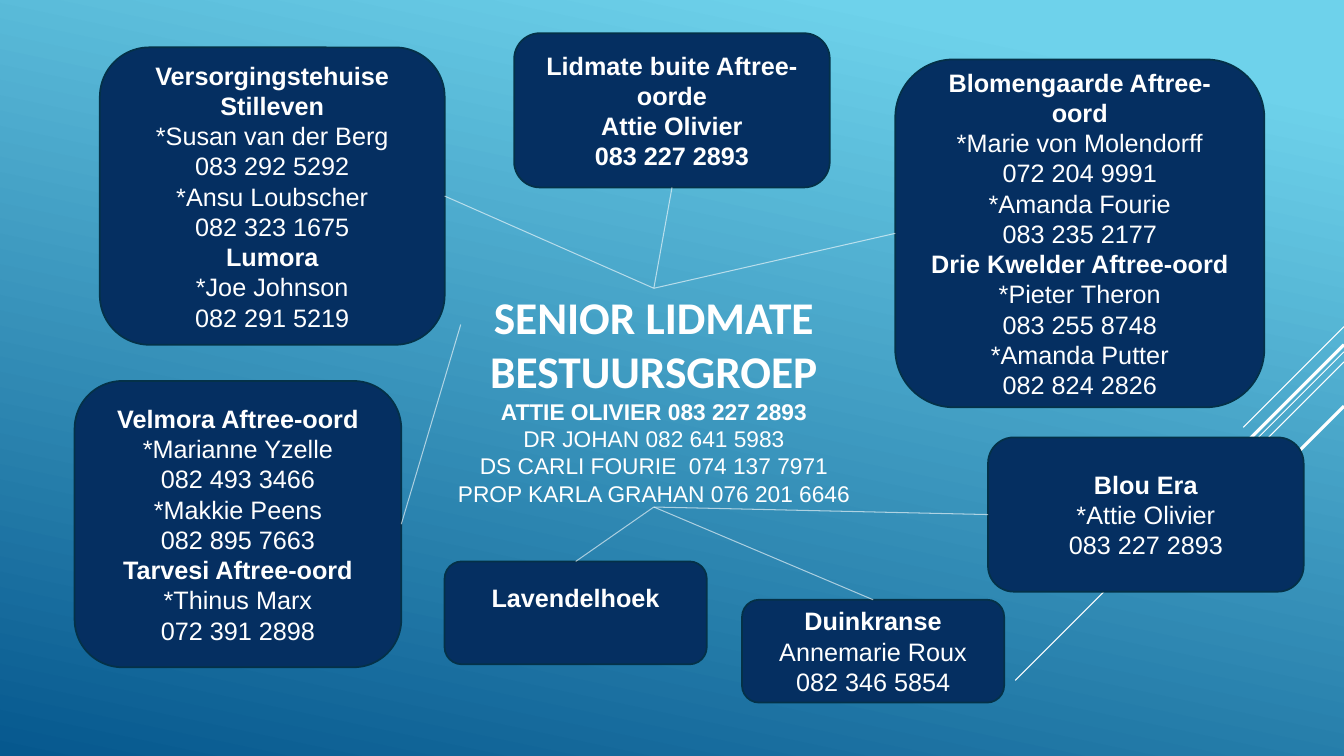
from copy import deepcopy
from dataclasses import dataclass

from lxml import etree
from pptx import Presentation
from pptx.dml.color import RGBColor
from pptx.enum.shapes import MSO_CONNECTOR, MSO_SHAPE
from pptx.enum.text import MSO_ANCHOR, MSO_AUTO_SIZE, PP_ALIGN
from pptx.oxml.ns import qn
from pptx.util import Inches, Pt

STRAIGHT = MSO_CONNECTOR.STRAIGHT
ROUNDED = MSO_SHAPE.ROUNDED_RECTANGLE
MIDDLE = MSO_ANCHOR.MIDDLE
NO_AUTOFIT = MSO_AUTO_SIZE.NONE
CENTER = PP_ALIGN.CENTER
TOP, LEFT, BOTTOM, RIGHT = range(4)

TITLE_ONLY = 5
WIDTH, HEIGHT = Inches(13.33), Inches(7.5)
COLUMNS, ROWS = 133.3, 75


@dataclass(frozen=True)
class Theme:
    sky: RGBColor = RGBColor(0x6E, 0xD2, 0xEB)
    sea: RGBColor = RGBColor(0x06, 0x58, 0x8E)
    card: RGBColor = RGBColor(0x05, 0x2F, 0x61)
    card_edge: RGBColor = RGBColor(0x04, 0x31, 0x48)
    white: RGBColor = RGBColor(0xFF, 0xFF, 0xFF)
    heading_font: str = "Calibri"
    body_font: str = "Arial"
    heading_size: float = 32.4
    contact_size: float = 16.2
    card_size: float = 18
    thin: float = 0.75
    thick: float = 2.25
    edge: float = 1.25


THEME = Theme()

# Text, bold
TITLE_HEADING = ["SENIOR LIDMATE", "BESTUURSGROEP"]
TITLE_CONTACTS = [
    ("ATTIE OLIVIER 083 227 2893", True),
    ("DR JOHAN 082 641 5983", False),
    ("DS CARLI FOURIE  074 137 7971", False),
    ("PROP KARLA GRAHAN 076 201 6646", False),
]

# Column, row, columns wide, rows high, bold lines, lines
CARDS = {
    "outside": (51, 3.3, 31.3, 15.3, {0, 1, 2},
                ["Lidmate buite Aftree-oorde", "Attie Olivier", "083 227 2893"]),
    "velmora": (7.4, 37.8, 32.4, 28.4, {0, 5},
                ["Velmora Aftree-oord", "*Marianne Yzelle", "082 493 3466",
                 "*Makkie Peens", "082 895 7663", "Tarvesi Aftree-oord",
                 "*Thinus Marx", "072 391 2898"]),
    "blomengaarde": (88.8, 5.9, 36.6, 34.5, {0, 5},
                     ["Blomengaarde Aftree-oord", "*Marie von Molendorff",
                      "072 204 9991", "*Amanda Fourie", "083 235 2177",
                      "Drie Kwelder Aftree-oord", "*Pieter Theron",
                      "083 255 8748", "*Amanda Putter", "082 824 2826"]),
    "lavendelhoek": (44.1, 55.7, 26, 10.2, {0}, ["Lavendelhoek"]),
    "blou_era": (98, 43.4, 31.3, 15.3, {0},
                 ["Blou Era", "*Attie Olivier", "083 227 2893"]),
    "care_homes": (9.9, 4.7, 34.2, 29.5, {0, 1, 6},
                   ["Versorgingstehuise", "Stilleven", "*Susan van der Berg",
                    "083 292 5292", "*Ansu Loubscher", "082 323 1675", "Lumora",
                    "*Joe Johnson", "082 291 5219"]),
    "duinkranse": (73.6, 59.5, 26, 10.2, {0},
                   ["Duinkranse", "Annemarie Roux", "082 346 5854"]),
}

# Card, side of the card, side of the title
LINKS = [
    ("outside", BOTTOM, TOP),
    ("lavendelhoek", TOP, BOTTOM),
    ("care_homes", RIGHT, TOP),
    ("blou_era", LEFT, BOTTOM),
    ("blomengaarde", LEFT, TOP),
    ("duinkranse", TOP, BOTTOM),
]

# Row at the right edge, length across, line width
DIAGONALS = [
    (32.4, 10, THEME.thin),
    (34.9, 32.6, THEME.thin),
    (35.9, 20.7, THEME.thin),
    (34.2, 19.1, THEME.thick),
    (40.3, 13.9, THEME.thick),
]


def across(columns):
    return round(WIDTH * columns / COLUMNS)


def down(rows):
    return round(HEIGHT * rows / ROWS)


def paint_background(slide):
    fill = slide.background.fill
    fill.gradient()
    fill.gradient_angle = 258
    for stop, color, position in zip(fill.gradient_stops,
                                     (THEME.sky, THEME.sea), (0.1, 1)):
        stop.color.rgb = color
        stop.position = position


def add_text(paragraph, text, font, size, bold):
    run = paragraph.add_run()
    run.text = text
    run.font.name = font
    run.font.size = Pt(size)
    run.font.bold = bold
    run.font.color.rgb = THEME.white
    return run


def add_line(slide, start=(0, 0), end=(0, 0), width=THEME.thin, opacity=100):
    line = slide.shapes.add_connector(STRAIGHT, across(start[0]), down(start[1]),
                                      across(end[0]), down(end[1]))
    line.line.color.rgb = THEME.white
    line.line.width = Pt(width)
    properties = line._element.spPr
    if opacity < 100:
        color = properties.find(".//" + qn("a:srgbClr"))
        etree.SubElement(color, qn("a:alpha")).set("val", str(opacity * 1000))
    etree.SubElement(properties, qn("a:effectLst"))
    return line


def fill_title(title):
    title.left, title.top = across(44.1), down(28.6)
    title.width, title.height = across(41.5), down(21.7)
    frame = title.text_frame
    frame.word_wrap = True
    frame.auto_size = NO_AUTOFIT
    frame.vertical_anchor = MIDDLE
    frame.margin_top = frame.margin_bottom = 0
    paragraph = frame.paragraphs[0]
    paragraph.alignment = CENTER
    paragraph.line_spacing = 1.0
    lines = [(text, THEME.heading_font, THEME.heading_size, True)
             for text in TITLE_HEADING]
    lines += [(text, THEME.body_font, THEME.contact_size, bold)
              for text, bold in TITLE_CONTACTS]
    for number, line in enumerate(lines):
        run = add_text(paragraph, *line)
        if number < len(lines) - 1:
            # A break takes the size of the line it ends
            paragraph._p.add_br().append(deepcopy(run._r.rPr))


def add_card(slide, column, row, columns, rows, bold_lines, lines):
    card = slide.shapes.add_shape(ROUNDED, across(column), down(row),
                                  across(columns), down(rows))
    card.shadow.inherit = False
    card.fill.solid()
    card.fill.fore_color.rgb = THEME.card
    card.line.color.rgb = THEME.card_edge
    card.line.width = Pt(THEME.edge)
    frame = card.text_frame
    frame.word_wrap = True
    frame.vertical_anchor = MIDDLE
    for number, text in enumerate(lines):
        paragraph = frame.add_paragraph() if number else frame.paragraphs[0]
        paragraph.alignment = CENTER
        add_text(paragraph, text, THEME.body_font, THEME.card_size,
                 number in bold_lines)
    return card


def main():
    presentation = Presentation()
    presentation.slide_width, presentation.slide_height = WIDTH, HEIGHT
    slide = presentation.slides.add_slide(presentation.slide_layouts[TITLE_ONLY])
    paint_background(slide)
    for row, length, width in DIAGONALS:
        add_line(slide, (COLUMNS, row), (COLUMNS - length, row + length), width)

    title = slide.shapes.title
    fill_title(title)
    cards = {name: add_card(slide, *card) for name, card in CARDS.items()}
    cards["lavendelhoek"].text_frame.margin_bottom = down(3.5)

    for name, card_side, title_side in LINKS:
        link = add_line(slide, opacity=60)
        link.begin_connect(cards[name], card_side)
        link.end_connect(title, title_side)
    velmora_link = add_line(slide, end=(45.7, 32.2), opacity=60)
    velmora_link.begin_connect(cards["velmora"], RIGHT)

    presentation.save("out.pptx")


if __name__ == "__main__":
    main()
